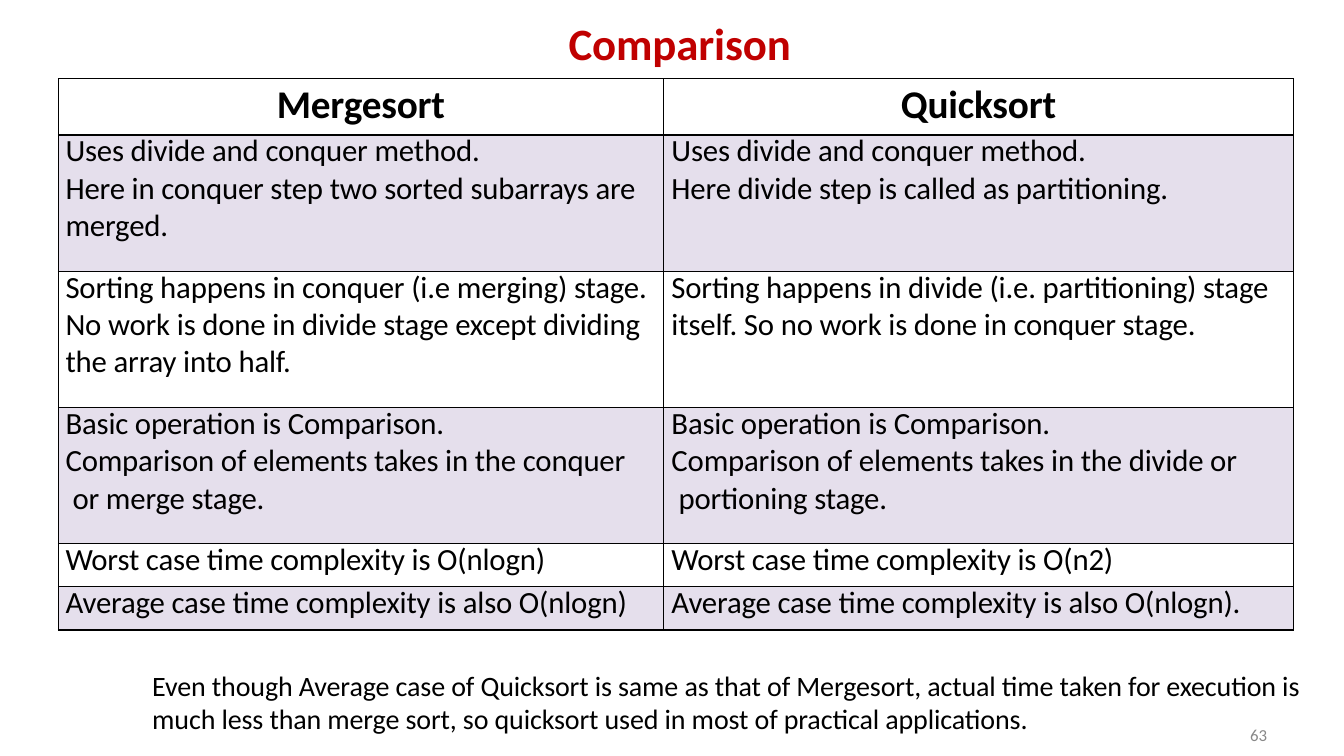
from lxml.etree import SubElement
from pptx import Presentation
from pptx.dml.color import RGBColor
from pptx.enum.text import PP_ALIGN
from pptx.oxml.ns import qn
from pptx.util import Inches, Pt

RED = RGBColor(0xC0, 0x00, 0x00)
BLACK = RGBColor(0x00, 0x00, 0x00)
GRAY = RGBColor(0x88, 0x88, 0x88)
WHITE = RGBColor(0xFF, 0xFF, 0xFF)
LAVENDER = RGBColor(0xE5, 0xDF, 0xEC)

COLUMN_WIDTHS = [6, 6.25]
COLUMN_INDENTS = [0.07, 0.08]
WRAP_INDENT = 0.07
ROW_HEIGHTS = [0.56, 1.35, 1.35, 1.35, 0.43, 0.43]
HEADINGS = ["Mergesort", "Quicksort"]
COMPARISONS = [
    (
        ["Uses divide and conquer method.",
         "Here in conquer step two sorted subarrays are merged."],
        ["Uses divide and conquer method.",
         "Here divide step is called as partitioning."],
    ),
    (
        ["Sorting happens in conquer (i.e merging) stage.",
         "No work is done in divide stage except dividing the array into half."],
        ["Sorting happens in divide (i.e. partitioning) stage",
         "itself. So no work is done in conquer stage."],
    ),
    (
        ["Basic operation is Comparison.",
         "Comparison of elements takes in the conquer",
         ("or merge stage.", WRAP_INDENT)],
        ["Basic operation is Comparison.",
         "Comparison of elements takes in the divide or",
         ("portioning stage.", WRAP_INDENT)],
    ),
    (["Worst case time complexity is O(nlogn)"],
     ["Worst case time complexity is O(n2)"]),
    (["Average case time complexity is also O(nlogn)"],
     ["Average case time complexity is also O(nlogn)."]),
]
CONCLUSION = (
    "Even though Average case of Quicksort is same as that of Mergesort, "
    "actual time taken for execution is much less than merge sort, "
    "so quicksort used in most of practical applications."
)


def add_span(para, text, size, color=BLACK, bold=False, spacing=-10):
    span = para.add_run()
    span.text = text
    span.font.name = "Calibri"
    span.font.size = Pt(size)
    span.font.bold = bold
    span.font.color.rgb = color
    span._r.get_or_add_rPr().set("spc", str(spacing))


def set_indent(para, inches):
    properties = para._p.get_or_add_pPr()
    properties.set("marL", str(Inches(inches)))
    properties.set("indent", "0")


def set_margins(holder, top):
    holder.margin_left = holder.margin_right = holder.margin_bottom = 0
    holder.margin_top = Inches(top)


def add_text(page, place, text, size, color, indent=0.01, top=0.01,
             bold=False, spacing=-10, line=None):
    box = page.shapes.add_textbox(*map(Inches, place))
    frame = box.text_frame
    frame.word_wrap = True
    set_margins(frame, top)
    para = frame.paragraphs[0]
    set_indent(para, indent)
    if line:
        para.line_spacing = Pt(line)
    add_span(para, text, size, color, bold, spacing)


def add_borders(cell):
    properties = cell._tc.get_or_add_tcPr()
    for side in ("lnL", "lnR", "lnT", "lnB"):
        border = SubElement(properties, qn(f"a:{side}"), w=str(Pt(1)))
        fill = SubElement(border, qn("a:solidFill"))
        SubElement(fill, qn("a:srgbClr"), val=str(BLACK))


def style_cell(cell, color, top):
    set_margins(cell, top)
    add_borders(cell)
    cell.fill.solid()
    cell.fill.fore_color.rgb = color


def fill_heading(cell, heading):
    style_cell(cell, WHITE, 0.03)
    para = cell.text_frame.paragraphs[0]
    para.alignment = PP_ALIGN.CENTER
    add_span(para, heading, 28, bold=True)


def fill_points(cell, points, indent, color):
    style_cell(cell, color, 0)
    frame = cell.text_frame
    for number, point in enumerate(points):
        text, extra = point if isinstance(point, tuple) else (point, 0)
        para = frame.add_paragraph() if number else frame.paragraphs[0]
        set_indent(para, indent + extra)
        if number == 0:
            para.line_spacing = Pt(25.1)
        add_span(para, text, 22)


def add_comparison_table(page):
    frame = page.shapes.add_table(
        len(ROW_HEIGHTS), len(COLUMN_WIDTHS), Inches(0.58), Inches(0.78),
        Inches(sum(COLUMN_WIDTHS)), Inches(sum(ROW_HEIGHTS)))
    table = frame.table
    table.first_row = False
    table.horz_banding = False
    for row, height in zip(table.rows, ROW_HEIGHTS):
        row.height = Inches(height)
    for index, width in enumerate(COLUMN_WIDTHS):
        table.columns[index].width = Inches(width)
        fill_heading(table.cell(0, index), HEADINGS[index])
        for row, sides in enumerate(COMPARISONS, start=1):
            color = LAVENDER if row % 2 else WHITE
            fill_points(table.cell(row, index), sides[index],
                        COLUMN_INDENTS[index], color)


def main():
    deck = Presentation()
    deck.slide_width = Inches(13.33)
    deck.slide_height = Inches(7.5)
    page = deck.slides.add_slide(deck.slide_layouts[6])
    add_text(page, (12.36, 7.22, 0.25, 0.19), "63", 12, GRAY,
             indent=0.04, top=0, spacing=0, line=12.4)
    add_text(page, (5.63, 0.15, 2.25, 0.56), "Comparison", 32, RED, bold=True)
    add_comparison_table(page)
    add_text(page, (1.5, 6.62, 11.56, 0.7), CONCLUSION, 20, BLACK)
    deck.save("out.pptx")


if __name__ == "__main__":
    main()
